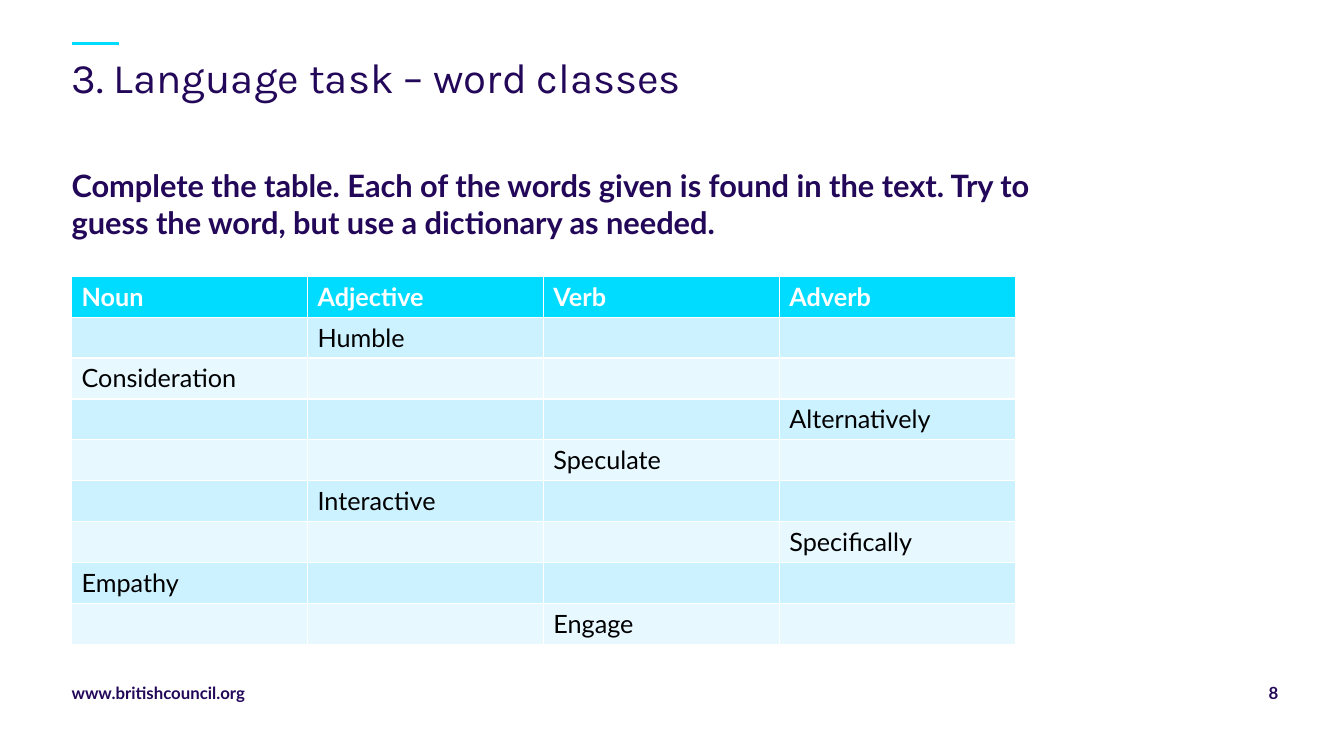
from lxml import etree
from pptx import Presentation
from pptx import util as u
from pptx.dml.color import RGBColor
from pptx.enum import shapes, text
from pptx.oxml import ns

NAVY = RGBColor(0x23, 0x08, 0x59)
CYAN = RGBColor(0x00, 0xDC, 0xFF)
WHITE = RGBColor(0xFF, 0xFF, 0xFF)
BLACK = RGBColor(0x00, 0x00, 0x00)
BANDS = [RGBColor(0xE7, 0xF9, 0xFF), RGBColor(0xCC, 0xF2, 0xFF)]

LEFT = u.Inches(0.71)
FOOT = u.Inches(6.77)
COL, ROW = u.Inches(2.34), u.Inches(0.406)
HEADS = ["Noun", "Adjective", "Verb", "Adverb"]
WORDS = [("Humble", 1), ("Consideration", 0), ("Alternatively", 3),
         ("Speculate", 2), ("Interactive", 1), ("Specifically", 3),
         ("Empathy", 0), ("Engage", 2)]


def style(para, size, color, bold=True, face="Lato"):
    font = para.font
    font.name, font.size, font.bold = face, u.Pt(size), bold
    font.color.rgb = color


def fill_box(box, words, anchor=text.MSO_ANCHOR.TOP):
    """Put text in a wrapped box without margins; return its paragraph."""
    frame = box.text_frame
    frame.text = words
    frame.word_wrap = True
    frame.auto_size = text.MSO_AUTO_SIZE.NONE
    frame.vertical_anchor = anchor
    frame.margin_left = frame.margin_right = 0
    frame.margin_top = frame.margin_bottom = 0
    para = frame.paragraphs[0]
    para.alignment = text.PP_ALIGN.LEFT
    return para


deck = Presentation()
deck.slide_width, deck.slide_height = u.Inches(13.33), u.Inches(7.5)
slide = deck.slides.add_slide(deck.slide_layouts[5])
items = slide.shapes

# Accent line and title
rule = items.add_connector(shapes.MSO_CONNECTOR.STRAIGHT,
                           LEFT, u.Inches(0.43), u.Inches(1.18), u.Inches(0.43))
rule.line.color.rgb = CYAN
rule.line.width = u.Pt(2.4)
etree.SubElement(rule._element.spPr, ns.qn("a:effectLst"))

title = items.title
title.left, title.top = LEFT, u.Inches(0.55)
title.width, title.height = u.Inches(11.97), u.Inches(0.87)
para = fill_box(title, "3. Language task – word classes")
para.line_spacing = u.Pt(33)
style(para, 30, NAVY, False, "Karla")

# Instruction
task = items.add_textbox(LEFT, u.Inches(1.65), u.Inches(10.09), u.Inches(0.9))
para = fill_box(task, "Complete the table. Each of the words given is found in "
                      "the text. Try to guess the word, but use a dictionary as needed.")
style(para, 22, NAVY)

# Word table: one given word per row; the table style draws the white borders
count = len(WORDS) + 1
grid = items.add_table(count, len(HEADS), LEFT, u.Inches(2.74),
                       COL * len(HEADS), ROW * count).table
for col, head in enumerate(HEADS):
    grid.cell(0, col).text = head
for row, (word, col) in enumerate(WORDS, 1):
    grid.cell(row, col).text = word
for row in range(count):
    for col in range(len(HEADS)):
        cell = grid.cell(row, col)
        cell.fill.solid()
        cell.fill.fore_color.rgb = BANDS[row % 2] if row else CYAN
        style(cell.text_frame.paragraphs[0], 18, BLACK if row else WHITE, row == 0)

# Footer
for left, width, words, align in [
        (LEFT, 7.52, "www.britishcouncil.org", text.PP_ALIGN.LEFT),
        (u.Inches(12.13), 0.55, "8", text.PP_ALIGN.RIGHT)]:
    box = items.add_textbox(left, FOOT, u.Inches(width), u.Inches(0.2))
    para = fill_box(box, words, text.MSO_ANCHOR.BOTTOM)
    para.alignment = align
    style(para, 12, NAVY)

deck.save("out.pptx")
